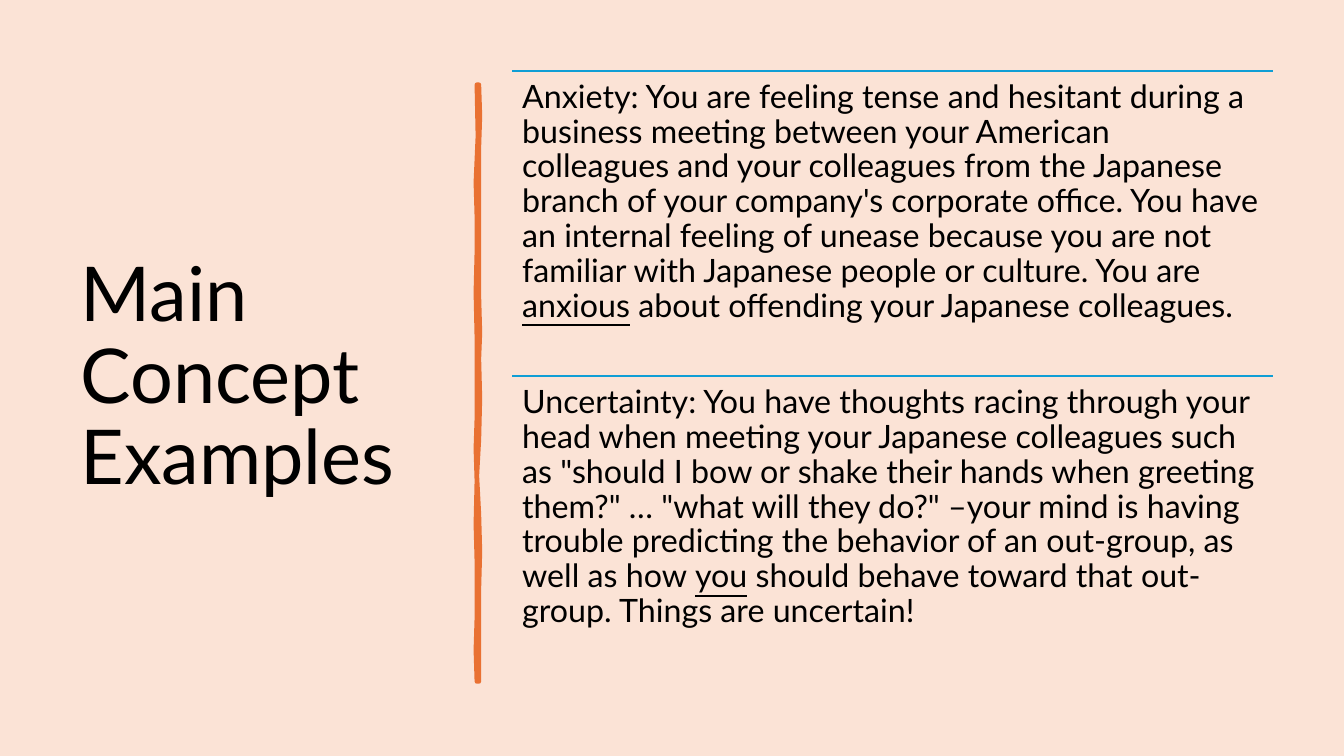
from lxml import etree
from pptx import Presentation
from pptx.dml.color import RGBColor
from pptx.enum.shapes import MSO_CONNECTOR
from pptx.enum.text import MSO_ANCHOR
from pptx.oxml.ns import qn
from pptx.util import Inches, Pt

TITLE = "Main Concept Examples"
# Each example: (text, underlined) runs
EXAMPLES = [
    [("Anxiety: You are feeling tense and hesitant during a business meeting between "
      "your American colleagues and your colleagues from the Japanese branch of your "
      "company's corporate office. You have an internal feeling of unease because you "
      "are not familiar with Japanese people or culture. You are ", False),
     ("anxious", True),
     (" about offending your Japanese colleagues.", False)],
    [("Uncertainty: You have thoughts racing through your head when meeting your "
      "Japanese colleagues such as \"should I bow or shake their hands when greeting "
      "them?\" … \"what will they do?\" –your mind is having trouble predicting the "
      "behavior of an out-group, as well as how ", False),
     ("you", True),
     (" should behave toward that out-group. Things are uncertain!", False)],
]
# Hand-drawn stroke: (x, y) down its right edge, then up its left edge
STROKE = [
    (4.75, 0.84), (4.76, 1.15), (4.75, 1.46), (4.75, 2.26), (4.75, 2.94),
    (4.76, 3.3), (4.75, 3.56), (4.76, 3.95), (4.75, 4.36), (4.73, 4.72),
    (4.75, 5.1), (4.76, 5.47), (4.75, 5.84), (4.75, 6.3), (4.75, 6.76),
    (4.73, 6.76), (4.72, 6.45), (4.73, 6.13), (4.73, 5.57), (4.72, 5.2),
    (4.73, 4.77), (4.72, 4.45), (4.73, 4.15), (4.73, 3.35), (4.72, 2.9),
    (4.73, 2.5), (4.73, 2.15), (4.72, 1.81), (4.74, 1.35), (4.73, 0.84),
]
FONT, INK, PEACH, ORANGE, BLUE = "Lato", "000000", "FBE3D6", "E97132", "0F9ED5"
WIDTH, HEIGHT = 13.33, 7.5
TOP = 0.7
TITLE_LEFT, TITLE_WIDTH, TITLE_HEIGHT = 0.7, 3.74, 6.11
EXAMPLE_LEFT, EXAMPLE_WIDTH, ROW_HEIGHT = 5.08, 7.55, 3.03


def color(value):
    return RGBColor.from_string(value)


def add_text(slide, box, runs, size):
    """Add one wrapped paragraph of (text, underlined) runs; return its frame."""
    frame = slide.shapes.add_textbox(*map(Inches, box)).text_frame
    frame.word_wrap = True
    paragraph = frame.paragraphs[0]
    paragraph.line_spacing = 0.9
    for text, underlined in runs:
        run = paragraph.add_run()
        run.text = text
        run.font.name = FONT
        run.font.size = Pt(size)
        run.font.color.rgb = color(INK)
        if underlined:
            run.font.underline = True
    return frame


def add_rule(slide, y):
    rule = slide.shapes.add_connector(
        MSO_CONNECTOR.STRAIGHT, Inches(EXAMPLE_LEFT), Inches(y),
        Inches(EXAMPLE_LEFT + EXAMPLE_WIDTH), Inches(y))
    rule.line.color.rgb = color(BLUE)
    rule.line.width = Pt(1.5)
    etree.SubElement(rule._element.spPr, qn("a:effectLst"))


def add_stroke(slide):
    start, *rest = [(Inches(x), Inches(y)) for x, y in STROKE]
    builder = slide.shapes.build_freeform(*start)
    builder.add_line_segments(rest, close=True)
    stroke = builder.convert_to_shape()
    stroke.shadow.inherit = False
    stroke.fill.solid()
    stroke.fill.fore_color.rgb = color(ORANGE)
    stroke.line.color.rgb = color(ORANGE)
    stroke.line.width = Pt(3.25)
    etree.SubElement(stroke.line._get_or_add_ln(), qn("a:round"))


def main():
    deck = Presentation()
    deck.slide_width, deck.slide_height = Inches(WIDTH), Inches(HEIGHT)
    slide = deck.slides.add_slide(deck.slide_layouts[6])
    slide.background.fill.solid()
    slide.background.fill.fore_color.rgb = color(PEACH)

    title = add_text(slide, (TITLE_LEFT, TOP, TITLE_WIDTH, TITLE_HEIGHT),
                     [(TITLE, False)], 54)
    title.vertical_anchor = MSO_ANCHOR.MIDDLE
    add_stroke(slide)

    for row, runs in enumerate(EXAMPLES):
        y = TOP + row * ROW_HEIGHT
        add_rule(slide, y)
        example = add_text(slide, (EXAMPLE_LEFT, y, EXAMPLE_WIDTH, ROW_HEIGHT), runs, 23)
        example.margin_top = example.margin_bottom = Inches(0.1)

    deck.save("out.pptx")


if __name__ == "__main__":
    main()
